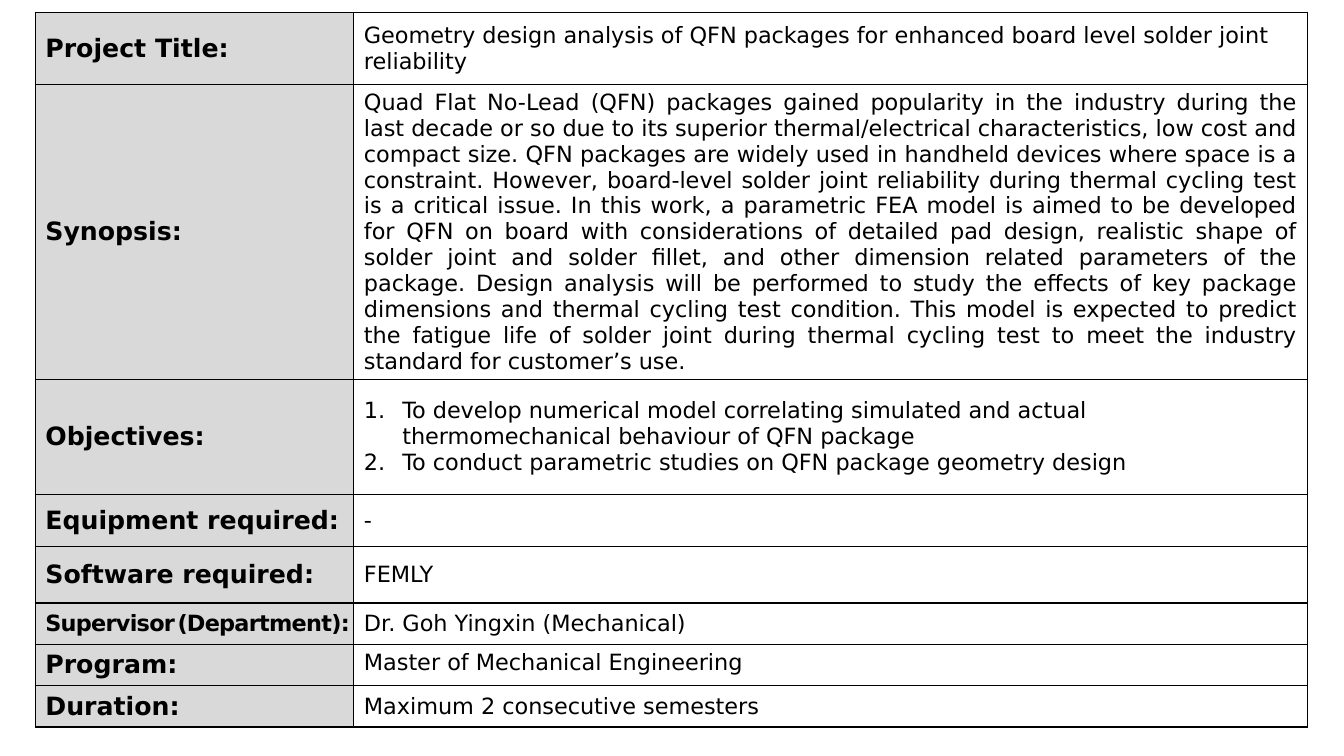
from lxml import etree
from pptx import Presentation
from pptx.dml.color import RGBColor
from pptx.enum.text import MSO_ANCHOR, PP_ALIGN
from pptx.oxml.ns import qn
from pptx.util import Inches, Pt

TOP, MIDDLE = MSO_ANCHOR.TOP, MSO_ANCHOR.MIDDLE
LEFT, JUSTIFY = PP_ALIGN.LEFT, PP_ALIGN.JUSTIFY

SYNOPSIS = [
    "Quad Flat No-Lead (QFN) packages gained popularity in the industry during the "
    "last decade or so due to its superior thermal/electrical characteristics, low cost "
    "and compact size.",
    "QFN packages are widely used in handheld devices where space is a constraint.",
    "However, board-level solder joint reliability during thermal cycling test is a "
    "critical issue.",
    "In this work, a parametric FEA model is aimed to be developed for QFN on board with "
    "considerations of detailed pad design, realistic shape of solder joint and solder "
    "fillet, and other dimension related parameters of the package.",
    "Design analysis will be performed to study the effects of key package dimensions "
    "and thermal cycling test condition.",
    "This model is expected to predict the fatigue life of solder joint during thermal "
    "cycling test to meet the industry standard for customer’s use.",
]
GOALS = [
    "To develop numerical model correlating simulated and actual "
    "thermomechanical behaviour of QFN package",
    "To conduct parametric studies on QFN package geometry design",
]
TIGHT = [("Supervisor", 16), (" ", 5), ("(Department):", 16)]

ROWS = [
    (0.72, "Project Title:", ["Geometry design analysis of QFN packages for enhanced "
                              "board level solder joint reliability"], {}),
    (2.66, "Synopsis:", [" ".join(SYNOPSIS)], {"align": JUSTIFY}),
    (1.14, "Objectives:", GOALS, {"number": True}),
    (0.52, "Equipment required:", ["-"], {}),
    (0.56, "Software required:", ["FEMLY"], {}),
    (0.41, TIGHT, ["Dr. Goh Yingxin (Mechanical)"], {}),
    (0.41, "Program:", ["Master of Mechanical Engineering"], {"anchor": TOP}),
    (0.41, "Duration:", ["Maximum 2 consecutive semesters"], {}),
]


def write(para, text, size=16, bold=False, space=None, font="DejaVu Sans", color="000000"):
    run = para.add_run()
    run.text = text
    run.font.name = font
    run.font.size = Pt(size)
    run.font.bold = bold
    run.font.color.rgb = RGBColor.from_string(color)
    if space is not None:
        run.font._element.set("spc", str(round(space * 100)))


class Sheet:
    colors = {"ink": "000000", "label": "D9D9D9"}

    def __init__(self, deck):
        self.slide = deck.slides.add_slide(deck.slide_layouts[6])

    def table(self, left, top, widths, heights, height):
        frame = self.slide.shapes.add_table(
            len(heights), len(widths), Inches(left), Inches(top),
            Inches(sum(widths)), Inches(height))
        grid = frame.table
        grid.first_row = grid.horz_banding = False
        for col, width in zip(grid.columns, widths):
            col.width = Inches(width)
        for row, size in zip(grid.rows, heights):
            row.height = Inches(size)
        frame.height = Inches(height)
        return grid

    def border(self, cell):
        props = cell._tc.get_or_add_tcPr()
        for side in ("lnL", "lnR", "lnT", "lnB"):
            line = etree.SubElement(props, qn("a:" + side), w=str(Pt(1)))
            fill = etree.SubElement(line, qn("a:solidFill"))
            etree.SubElement(fill, qn("a:srgbClr"), val=self.colors["ink"])

    def label(self, cell, text):
        self.border(cell)
        cell.fill.solid()
        cell.fill.fore_color.rgb = RGBColor.from_string(self.colors["label"])
        cell.vertical_anchor = MIDDLE
        para = cell.text_frame.paragraphs[0]
        if isinstance(text, str):
            write(para, text, size=18, bold=True, color=self.colors["ink"])
            return
        cell.margin_right = 0
        for part, size in text:
            write(para, part, size=size, bold=True, space=-0.5, color=self.colors["ink"])

    def body(self, cell, lines, align=LEFT, anchor=MIDDLE, number=False):
        self.border(cell)
        cell.fill.background()
        cell.vertical_anchor = anchor
        frame = cell.text_frame
        for i, text in enumerate(lines):
            para = frame.add_paragraph() if i else frame.paragraphs[0]
            para.alignment = align
            if number:
                self.number(para)
            write(para, text, color=self.colors["ink"])

    def number(self, para, indent=0.38):
        props = para._p.get_or_add_pPr()
        props.set("marL", str(Inches(indent)))
        props.set("indent", str(-Inches(indent)))
        etree.SubElement(props, qn("a:buAutoNum"), type="arabicPeriod")


def main():
    deck = Presentation()
    deck.slide_width, deck.slide_height = Inches(13.33), Inches(7.5)
    sheet = Sheet(deck)
    grid = sheet.table(0.35, 0.12, [3.16, 9.46], [row[0] for row in ROWS], 7.19)
    for i, (_, label, lines, style) in enumerate(ROWS):
        sheet.label(grid.cell(i, 0), label)
        sheet.body(grid.cell(i, 1), lines, **style)
    deck.save("out.pptx")


if __name__ == "__main__":
    main()
